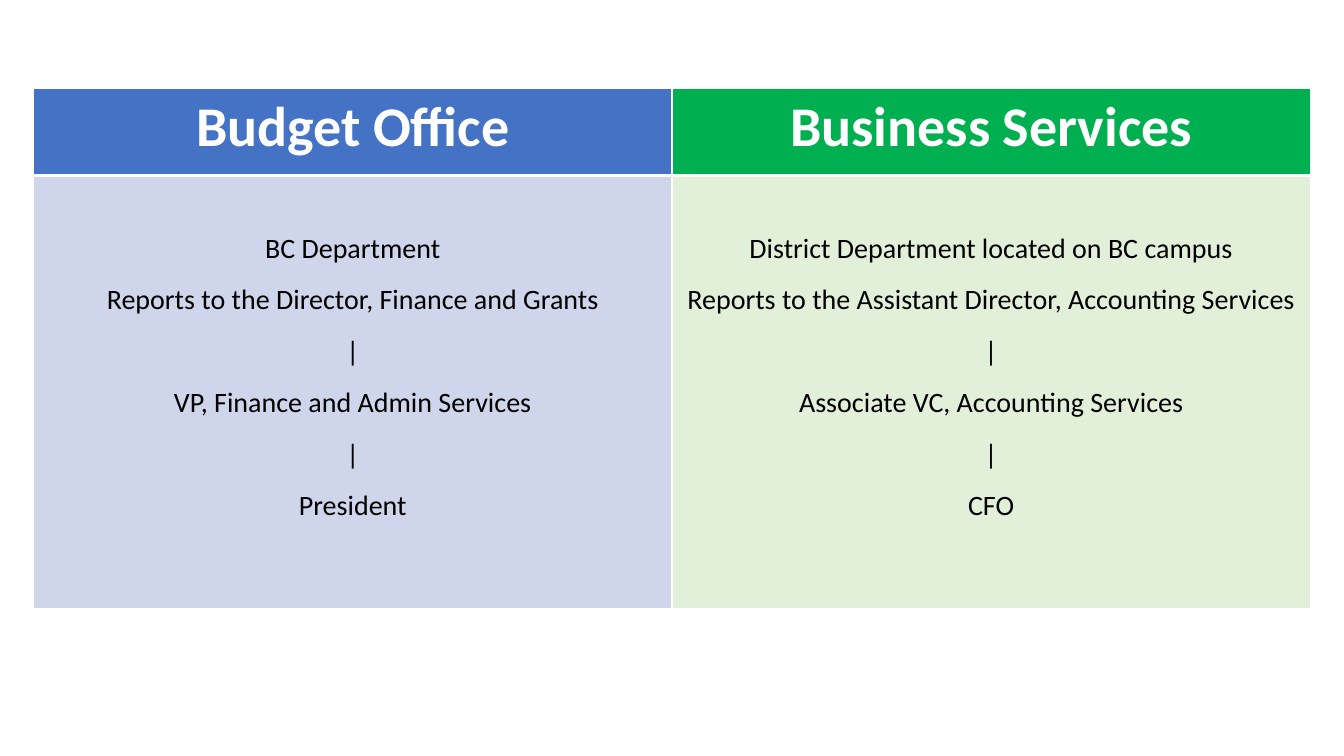
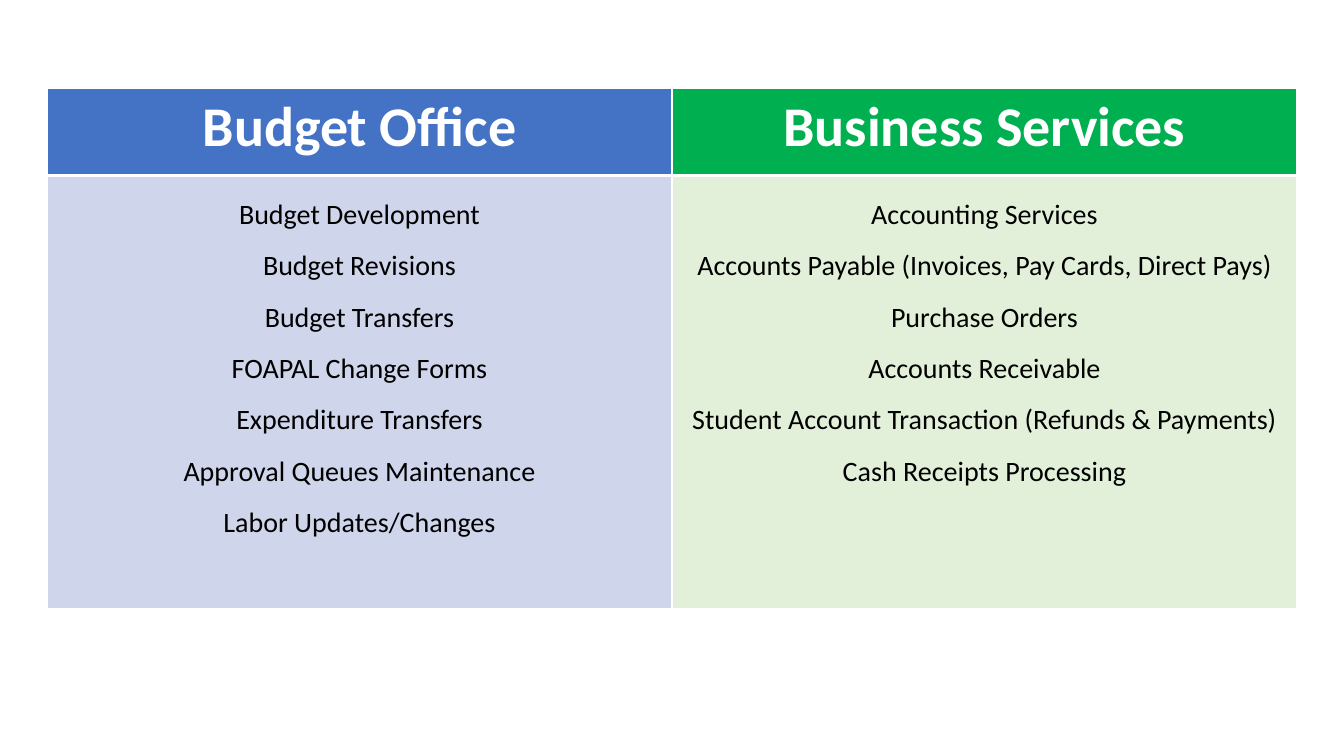
from lxml.etree import SubElement
from pptx import Presentation
from pptx.dml.color import RGBColor
from pptx.enum.text import PP_ALIGN as Align
from pptx.oxml.ns import qn
from pptx.util import Inches, Pt

WHITE = RGBColor(0xFF, 0xFF, 0xFF)
BLACK = RGBColor(0x00, 0x00, 0x00)
BLUE = RGBColor(0x44, 0x72, 0xC4)
PALE_BLUE = RGBColor(0xCF, 0xD5, 0xEA)
GREEN = RGBColor(0x00, 0xB0, 0x50)
PALE_GREEN = RGBColor(0xE2, 0xF0, 0xD9)

FONT = "Calibri"
TABLE_TOP = Inches(0.88)
HEADER_HEIGHT = Inches(0.86)
BODY_HEIGHT = Inches(4.3)
CELL_MARGIN = 0.05

# Each office: heading, header fill, body fill
OFFICES = [
    ("Budget Office", BLUE, PALE_BLUE),
    ("Business Services", GREEN, PALE_GREEN),
]

# Each page: table share of the slide width, extra space above the body, body lines per office
PAGES = [
    (0.95, 0.34, [
        ["BC Department", "Reports to the Director, Finance and Grants", "|",
         "VP, Finance and Admin Services", "|", "President"],
        ["District Department located on BC campus",
         "Reports to the Assistant Director, Accounting Services", "|",
         "Associate VC, Accounting Services", "|", "CFO"],
    ]),
    (0.93, 0, [
        ["Budget Development", "Budget Revisions", "Budget Transfers",
         "FOAPAL Change Forms", "Expenditure Transfers",
         "Approval Queues Maintenance", "Labor Updates/Changes"],
        ["Accounting Services", "Accounts Payable (Invoices, Pay Cards, Direct Pays)",
         "Purchase Orders", "Accounts Receivable",
         "Student Account Transaction (Refunds & Payments)",
         "Cash Receipts Processing"],
    ]),
]


def add_borders(cell, widths):
    """Draw white cell borders; widths are points for left, right, top, bottom."""
    properties = cell._tc.get_or_add_tcPr()
    for side, width in zip("LRTB", widths):
        line = SubElement(properties, qn(f"a:ln{side}"), w=str(Pt(width)))
        fill = SubElement(line, qn("a:solidFill"))
        SubElement(fill, qn("a:srgbClr"), val=str(WHITE))


def fill_cell(cell, lines, fill_color, text_color, size, bold, spacing, borders):
    add_borders(cell, borders)
    cell.fill.solid()
    cell.fill.fore_color.rgb = fill_color
    cell.text_frame.text = "\n".join(lines)
    for para in cell.text_frame.paragraphs:
        para.alignment = Align.CENTER
        para.line_spacing = spacing
        for span in para.runs:
            span.font.name = FONT
            span.font.size = Pt(size)
            span.font.bold = bold
            span.font.color.rgb = text_color


deck = Presentation()
deck.slide_width = Inches(13.33)
deck.slide_height = Inches(7.5)

for width_share, extra_top, bodies in PAGES:
    page = deck.slides.add_slide(deck.slide_layouts[6])

    # Centred table with two equal columns
    width = int(deck.slide_width * width_share)
    left = (deck.slide_width - width) // 2
    table = page.shapes.add_table(2, len(OFFICES), left, TABLE_TOP, width,
                                  HEADER_HEIGHT + BODY_HEIGHT).table
    table.rows[0].height = HEADER_HEIGHT
    table.rows[1].height = BODY_HEIGHT

    # Heading above its list, one office a column
    for column, ((heading, strong, pale), lines) in enumerate(zip(OFFICES, bodies)):
        table.columns[column].width = width // len(OFFICES)
        fill_cell(table.cell(0, column), [heading], strong, WHITE, 40, True, 1.0, (1, 1, 1, 3))
        body = table.cell(1, column)
        fill_cell(body, lines, pale, BLACK, 20, False, 1.5, (1, 1, 3, 1))
        body.margin_top = Inches(CELL_MARGIN + extra_top)

deck.save("out.pptx")
